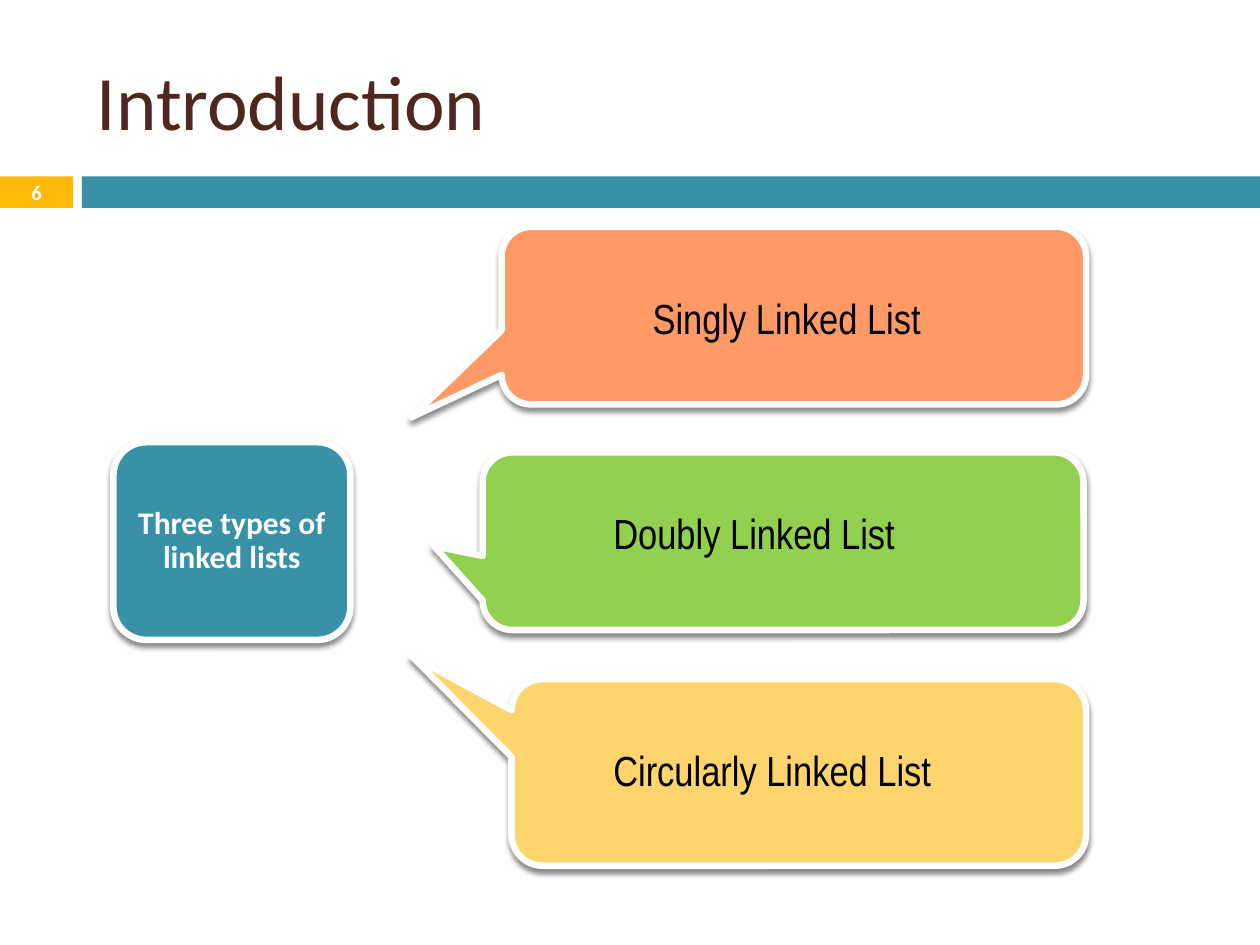
from lxml import etree
from pptx import Presentation
from pptx import util as u
from pptx.dml.color import RGBColor
from pptx.enum import shapes, text
from pptx.oxml.ns import qn

Pt = u.Pt
Shape = shapes.MSO_SHAPE
Align = text.PP_ALIGN
Anchor = text.MSO_ANCHOR

COLORS = {
    "teal": "3891A7", "amber": "FEB80A", "orange": "FF9966", "green": "92D050",
    "yellow": "FED46C", "brown": "4F271C", "white": "FFFFFF", "black": "000000",
}
HEADING = "Introduction"
PAGE_NUMBER = "6"
TOPIC = "Three types of linked lists"
LIST_TYPES = [
    {"label": "Singly Linked List", "fill": "orange", "box": (286.6, 129.6, 334, 101.5),
     "tip": (-0.654, 0.572), "label_box": (365.8, 163.4, 202.3, 36)},
    {"label": "Doubly Linked List", "fill": "green", "box": (275.8, 258.5, 343.4, 101.5),
     "tip": (-0.581, 0.028), "label_box": (343.4, 286.6, 219.6, 36)},
    {"label": "Circularly Linked List", "fill": "yellow", "box": (292.3, 388.1, 328.3, 106.6),
     "tip": (-0.673, -0.621), "label_box": (343.4, 421.9, 258.5, 36)},
]
SLIDE_SIZE = (720, 540)
BAND_TOP, BAND_HEIGHT = 100.8, 18
NUMBER_WIDTH, BAND_LEFT = 41.8, 46.8


def color(name):
    return RGBColor.from_string(COLORS[name])


def add_block(slide, kind, box, fill):
    block = slide.shapes.add_shape(kind, *map(Pt, box))
    block.shadow.inherit = False
    block.fill.solid()
    block.fill.fore_color.rgb = color(fill)
    block.line.fill.background()
    return block


def raise_block(block):
    block.line.color.rgb = color("white")
    block.line.width = Pt(3.75)
    effects = block._element.spPr.find(qn("a:effectLst"))
    shadow = etree.SubElement(effects, qn("a:outerShdw"), blurRad=str(Pt(3)),
                              dist=str(Pt(2.4)), dir="5400000", rotWithShape="0")
    tint = etree.SubElement(shadow, qn("a:srgbClr"), val=COLORS["black"])
    etree.SubElement(tint, qn("a:alpha"), val="45000")


def write(frame, words, size, ink, font="Calibri", bold=False,
          align=Align.LEFT, anchor=Anchor.MIDDLE):
    frame.word_wrap = True
    frame.vertical_anchor = anchor
    paragraph = frame.paragraphs[0]
    paragraph.alignment = align
    run = paragraph.add_run()
    run.text = words
    run.font.name = font
    run.font.size = Pt(size)
    run.font.bold = bold
    run.font.color.rgb = color(ink)
    return paragraph


def set_margins(frame, across, down):
    frame.margin_left = frame.margin_right = Pt(across)
    frame.margin_top = frame.margin_bottom = Pt(down)


def main():
    deck = Presentation()
    deck.slide_width, deck.slide_height = map(Pt, SLIDE_SIZE)
    slide = deck.slides.add_slide(deck.slide_layouts[5])

    heading = slide.shapes.title
    heading.left, heading.top, heading.width, heading.height = map(Pt, (48.2, 18, 642.2, 77.8))
    write(heading.text_frame, HEADING, 44, "brown")

    number = add_block(slide, Shape.RECTANGLE,
                       (0, BAND_TOP, NUMBER_WIDTH, BAND_HEIGHT), "amber")
    set_margins(number.text_frame, 0, 0)
    write(number.text_frame, PAGE_NUMBER, 11.9, "white", bold=True, align=Align.CENTER)
    add_block(slide, Shape.RECTANGLE,
              (BAND_LEFT, BAND_TOP, SLIDE_SIZE[0] - BAND_LEFT, BAND_HEIGHT), "teal")

    topic = add_block(slide, Shape.ROUNDED_RECTANGLE, (64.8, 252.7, 135.4, 113), "teal")
    raise_block(topic)
    set_margins(topic.text_frame, 2.2, 2.2)
    topic_line = write(topic.text_frame, TOPIC, 18, "white", bold=True, align=Align.CENTER)
    topic_line.line_spacing = 0.9

    for kind in LIST_TYPES:
        callout = add_block(slide, Shape.ROUNDED_RECTANGULAR_CALLOUT, kind["box"], kind["fill"])
        raise_block(callout)
        for index, value in enumerate((*kind["tip"], 0.167)):
            callout.adjustments[index] = value
        label = slide.shapes.add_textbox(*map(Pt, kind["label_box"]))
        write(label.text_frame, kind["label"], 24, "black", font="Arial Narrow",
              anchor=Anchor.TOP)

    deck.save("out.pptx")


if __name__ == "__main__":
    main()
